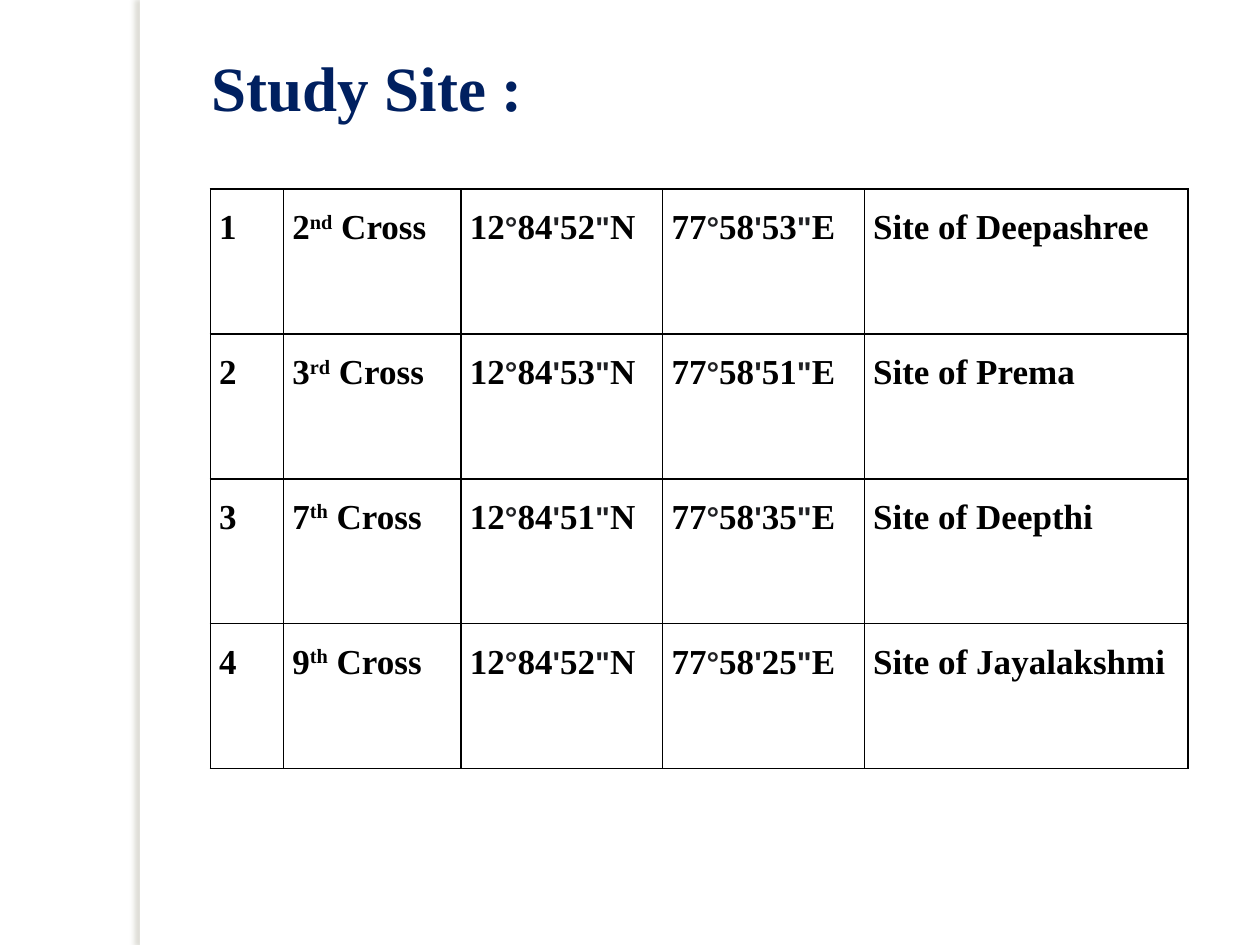
from lxml.etree import SubElement
from pptx import Presentation
from pptx.dml.color import RGBColor
from pptx.enum.shapes import MSO_SHAPE
from pptx.enum.text import MSO_ANCHOR, MSO_AUTO_SIZE
from pptx.oxml import parse_xml
from pptx.oxml.ns import nsdecls, qn
from pptx.util import Inches, Pt

TITLE = "Study Site :"
# number, ordinal suffix is split from the street number, latitude, longitude, site
SITES = [
    ("1", ("2", "nd"), "12°84'52\"N", "77°58'53\"E", "Site of Deepashree"),
    ("2", ("3", "rd"), "12°84'53\"N", "77°58'51\"E", "Site of Prema"),
    ("3", ("7", "th"), "12°84'51\"N", "77°58'35\"E", "Site of Deepthi"),
    ("4", ("9", "th"), "12°84'52\"N", "77°58'25\"E", "Site of Jayalakshmi"),
]
COLUMN_WIDTHS = [0.58, 1.41, 1.6, 1.6, 2.57]
ROW_HEIGHT = 1.15
SERIF, SANS = "Times New Roman", "Arial"
BLACK, GRAY, NAVY, WHITE = "000000", "202124", "002060", "FFFFFF"
MARKS = "°'\""


def color(hex_value):
    return RGBColor.from_string(hex_value)


def add_run(paragraph, text, size=20, font=SERIF, hex_value=BLACK):
    run = paragraph.add_run()
    run.text = text
    run.font.size, run.font.name, run.font.bold = Pt(size), font, True
    run.font.color.rgb = color(hex_value)
    return run


def add_coordinate(paragraph, text):
    """Set degree, minute and second marks in the smaller sans font."""
    for mark in MARKS:
        number, text = text.split(mark)
        add_run(paragraph, number)
        add_run(paragraph, mark, 18, SANS, GRAY)
    add_run(paragraph, text)


def add_street(paragraph, number, suffix):
    add_run(paragraph, number)
    add_run(paragraph, suffix).font._element.set("baseline", "30000")
    add_run(paragraph, " Cross")


def style_cell(cell):
    cell.margin_left = cell.margin_right = Inches(0.07)
    cell.margin_top = cell.margin_bottom = 0
    properties = cell._tc.get_or_add_tcPr()
    for side in ("lnL", "lnR", "lnT", "lnB"):
        line = SubElement(properties, qn(f"a:{side}"), w=str(Pt(1)))
        fill = SubElement(line, qn("a:solidFill"))
        SubElement(fill, qn("a:srgbClr"), val=BLACK)
    cell.fill.background()


def add_side_strip(slide):
    strip = slide.shapes.add_shape(
        MSO_SHAPE.RECTANGLE, Inches(1.11), 0, Inches(0.08), Inches(7.5))
    strip.fill.solid()
    strip.fill.fore_color.rgb = color(WHITE)
    strip.line.fill.background()
    strip._element.spPr.append(parse_xml(
        f'<a:effectLst {nsdecls("a")}>'
        f'<a:outerShdw blurRad="{Pt(3)}" dist="{Pt(3)}" dir="10800000" algn="tl" rotWithShape="0">'
        '<a:srgbClr val="7F7D63"><a:alpha val="25000"/></a:srgbClr>'
        '</a:outerShdw></a:effectLst>'))


def add_site_table(slide):
    table = slide.shapes.add_table(
        len(SITES), len(COLUMN_WIDTHS), Inches(1.67), Inches(1.5),
        Inches(sum(COLUMN_WIDTHS)), Inches(ROW_HEIGHT * len(SITES))).table
    table.first_row = table.horz_banding = False
    for column, width in zip(table.columns, COLUMN_WIDTHS):
        column.width = Inches(width)
    for row, site in zip(table.rows, SITES):
        row.height = Inches(ROW_HEIGHT)
        for cell, content in zip(row.cells, site):
            style_cell(cell)
            paragraph = cell.text_frame.paragraphs[0]
            paragraph.line_spacing = 1.5
            if isinstance(content, tuple):
                add_street(paragraph, *content)
            elif "°" in content:
                add_coordinate(paragraph, content)
            else:
                add_run(paragraph, content)


def add_title(slide):
    title = slide.shapes.add_textbox(
        Inches(1.58), Inches(0.33), Inches(3.5), Inches(0.71))
    frame = title.text_frame
    frame.word_wrap = True
    frame.auto_size = MSO_AUTO_SIZE.SHAPE_TO_FIT_TEXT
    frame.vertical_anchor = MSO_ANCHOR.MIDDLE
    add_run(frame.paragraphs[0], TITLE, 36, hex_value=NAVY)


def main():
    presentation = Presentation()
    presentation.slide_width, presentation.slide_height = Inches(10), Inches(7.5)
    slide = presentation.slides.add_slide(presentation.slide_layouts[6])
    add_side_strip(slide)
    add_site_table(slide)
    add_title(slide)
    presentation.save("out.pptx")


if __name__ == "__main__":
    main()
